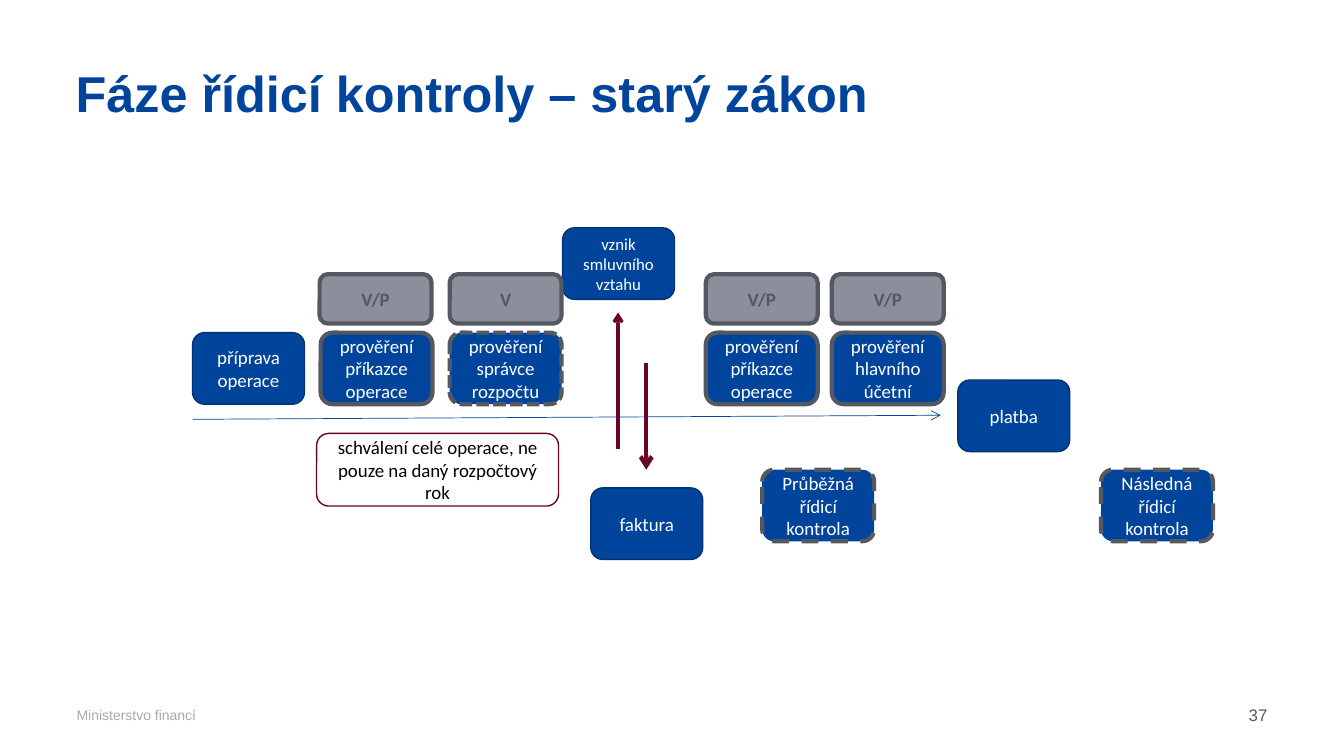
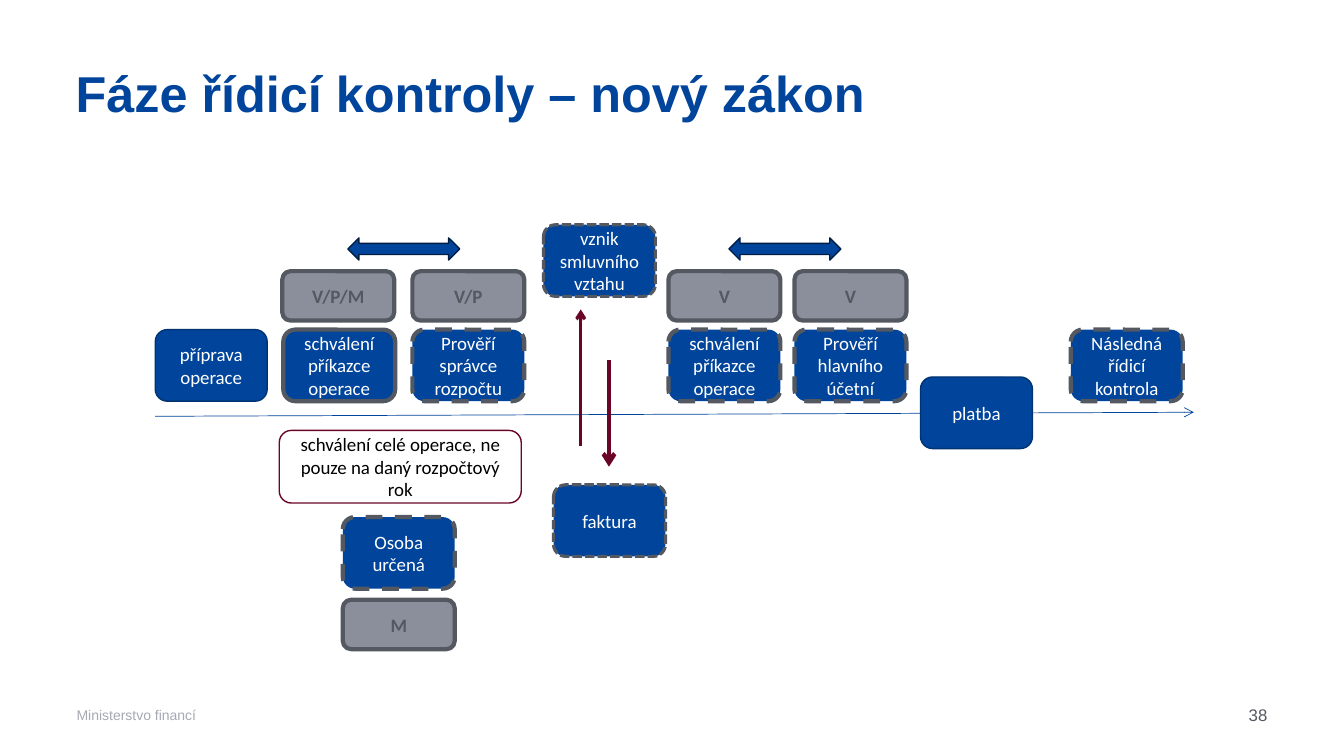
from lxml.etree import SubElement
from pptx import Presentation
from pptx.dml.color import RGBColor
from pptx.enum.dml import MSO_LINE
from pptx.enum.shapes import MSO_CONNECTOR, MSO_SHAPE
from pptx.enum.text import MSO_ANCHOR, PP_ALIGN
from pptx.oxml.ns import qn
from pptx.util import Inches, Pt

BLUE = RGBColor(0x00, 0x45, 0x9B)
EDGE_BLUE = RGBColor(0x00, 0x33, 0x73)
NAVY = RGBColor(0x00, 0x1E, 0x44)
WINE = RGBColor(0x69, 0x05, 0x27)
SLATE = RGBColor(0x54, 0x58, 0x60)
GREY = RGBColor(0x8B, 0x8E, 0x9B)
PALE_GREY = RGBColor(0xA7, 0xA9, 0xB3)
WHITE = RGBColor(0xFF, 0xFF, 0xFF)
BLACK = RGBColor(0x00, 0x00, 0x00)

COLUMNS = {
    "start": 0, "note": 1.23, "badge": 1.26, "client": 1.27, "person": 1.86,
    "budget": 2.55, "contract": 3.67, "shifted contract": 3.85, "invoice": 3.95,
    "payer": 5.09, "interim": 5.65, "accountant": 6.34, "payment": 7.59,
    "later": 9.01, "new later": 9.08, "first swap": 1.91, "second swap": 5.69,
}
ROWS = {
    "contract": -1.04, "swap": -0.91, "badge": -0.58, "step": 0, "payment": 0.47,
    "note": 1, "later": 1.36, "invoice": 1.54, "person": 1.86, "person badge": 2.68,
}
BOX = (1.11, 0.71)
BADGE = (1.11, 0.49)
NOTE = (2.4, 0.72)
SWAP = (1.11, 0.22)

STYLES = {
    "plain": (BOX, BLUE, EDGE_BLUE, 1, None, WHITE),
    "solid": (BOX, BLUE, SLATE, 3, None, WHITE),
    "dashed": (BOX, BLUE, SLATE, 3, MSO_LINE.DASH, WHITE),
    "dotted": (BOX, BLUE, SLATE, 3, MSO_LINE.SQUARE_DOT, WHITE),
    "thin dotted": (BOX, BLUE, SLATE, 2.25, MSO_LINE.SQUARE_DOT, WHITE),
    "badge": (BADGE, GREY, SLATE, 3, None, SLATE),
    "note": (NOTE, WHITE, WINE, 1, None, BLACK),
    "swap": (SWAP, BLUE, NAVY, 1, None, WHITE),
}

SHARED_STEPS = [
    ("příprava operace", "start", "step", "plain"),
    ("platba", "payment", "payment", "plain"),
    ("schválení celé operace, ne pouze na daný rozpočtový rok", "note", "note", "note"),
]

PHASES = [
    {
        "title": "Fáze řídicí kontroly – starý zákon",
        "number": "37",
        "origin": (1.91, 3.3),
        "timeline": 7.42,
        "contract size": 12,
        "steps": [
            ("vznik smluvního vztahu", "contract", "contract", "plain"),
            ("faktura", "invoice", "invoice", "plain"),
            ("prověření příkazce operace", "client", "step", "solid"),
            ("prověření správce rozpočtu", "budget", "step", "dotted"),
            ("prověření příkazce operace", "payer", "step", "solid"),
            ("prověření hlavního účetní", "accountant", "step", "solid"),
            ("Průběžná řídicí kontrola", "interim", "later", "dashed"),
            ("Následná řídicí kontrola", "later", "later", "dashed"),
        ],
        "badges": ["V/P", "V", "V/P", "V/P"],
        "extras": [],
    },
    {
        "title": "Fáze řídicí kontroly – nový zákon",
        "number": "38",
        "origin": (1.54, 3.27),
        "timeline": 10.3,
        "contract size": 13.5,
        "steps": [
            ("vznik smluvního vztahu", "shifted contract", "contract", "thin dotted"),
            ("faktura", "invoice", "invoice", "thin dotted"),
            ("schválení příkazce operace", "client", "step", "solid"),
            ("Prověří správce rozpočtu", "budget", "step", "dashed"),
            ("schválení příkazce operace", "payer", "step", "dashed"),
            ("Prověří hlavního účetní", "accountant", "step", "dashed"),
            ("Následná řídicí kontrola", "new later", "step", "dashed"),
            ("Osoba určená", "person", "person", "dashed"),
        ],
        "badges": ["V/P/M", "V/P", "V", "V"],
        "extras": [
            ("M", "person", "person badge", "badge"),
            ("", "first swap", "swap", "swap"),
            ("", "second swap", "swap", "swap"),
        ],
    },
]
BADGE_COLUMNS = ["badge", "budget", "payer", "accountant"]
FLOWS = [((4.22, 1.15), (4.22, -0.2), 2.25), ((4.5, 0.3), (4.5, 1.36), 3)]

FRAME = {
    "title": ((0.75, 0.68, 10.83, 1.17), MSO_ANCHOR.TOP, PP_ALIGN.LEFT, 0.9, BLUE,
              {"name": "Arial", "size": Pt(36), "bold": True}),
    "footer": ((0.76, 6.89, 4.32, 0.4), MSO_ANCHOR.MIDDLE, PP_ALIGN.LEFT, 1, PALE_GREY,
               {"name": "Arial", "size": Pt(10)}),
    "number": ((9.57, 6.89, 3, 0.4), MSO_ANCHOR.MIDDLE, PP_ALIGN.RIGHT, 1, SLATE,
               {"name": "Arial", "size": Pt(12)}),
}
FOOTER = "Ministerstvo financí"
NO_MARGINS = dict.fromkeys(
    ("margin_left", "margin_top", "margin_right", "margin_bottom"), 0)


def assign(target, values):
    for name, value in values.items():
        setattr(target, name, value)


def write(frame, text, align, color, values):
    paragraph = frame.paragraphs[0]
    paragraph.alignment = align
    run = paragraph.add_run()
    run.text = text
    assign(run.font, values)
    run.font.color.rgb = color
    return paragraph


def add_frame_text(slide, part, text):
    place, anchor, align, spacing, color, values = FRAME[part]
    frame = slide.shapes.add_textbox(*map(Inches, place)).text_frame
    assign(frame, {"word_wrap": True, "vertical_anchor": anchor, **NO_MARGINS})
    write(frame, text, align, color, values).line_spacing = spacing


def add_step(slide, origin, step, size=13.5):
    text, column, row, style = step
    extent, fill, edge, weight, dash, ink = STYLES[style]
    preset = MSO_SHAPE.LEFT_RIGHT_ARROW if style == "swap" else MSO_SHAPE.ROUNDED_RECTANGLE
    corner = (origin[0] + COLUMNS[column], origin[1] + ROWS[row])
    shape = slide.shapes.add_shape(preset, *map(Inches, corner + extent))
    shape.shadow.inherit = False
    shape.fill.solid()
    shape.fill.fore_color.rgb = fill
    shape.line.color.rgb = edge
    assign(shape.line, {"width": Pt(weight), "dash_style": dash})
    if text:
        assign(shape.text_frame, {"word_wrap": True, "vertical_anchor": MSO_ANCHOR.MIDDLE})
        write(shape.text_frame, text, PP_ALIGN.CENTER, ink,
              {"name": "Calibri", "size": Pt(size), "bold": style == "badge"})


def add_arrow(slide, origin, start, end, weight, color):
    ends = [Inches(base + offset) for point in (start, end)
            for base, offset in zip(origin, point)]
    arrow = slide.shapes.add_connector(MSO_CONNECTOR.STRAIGHT, *ends)
    arrow.line.color.rgb = color
    arrow.line.width = Pt(weight)
    properties = arrow._element.spPr
    SubElement(properties.find(qn("a:ln")), qn("a:tailEnd"), type="arrow")
    SubElement(properties, qn("a:effectLst"))


def add_phase(deck, phase):
    slide = deck.slides.add_slide(deck.slide_layouts[6])
    origin = phase["origin"]
    for part, text in (("footer", FOOTER), ("title", phase["title"]),
                       ("number", phase["number"])):
        add_frame_text(slide, part, text)
    add_arrow(slide, origin, (0, 0.86), (phase["timeline"], 0.82), 0.5, BLUE)
    for start, end, weight in FLOWS:
        add_arrow(slide, origin, start, end, weight, WINE)
    contract, *steps = phase["steps"]
    add_step(slide, origin, contract, phase["contract size"])
    badges = [(text, column, "badge", "badge")
              for text, column in zip(phase["badges"], BADGE_COLUMNS)]
    for step in SHARED_STEPS + steps + badges + phase["extras"]:
        add_step(slide, origin, step)


def main():
    deck = Presentation()
    assign(deck, {"slide_width": Inches(13.33), "slide_height": Inches(7.5)})
    for phase in PHASES:
        add_phase(deck, phase)
    deck.save("out.pptx")


if __name__ == "__main__":
    main()
